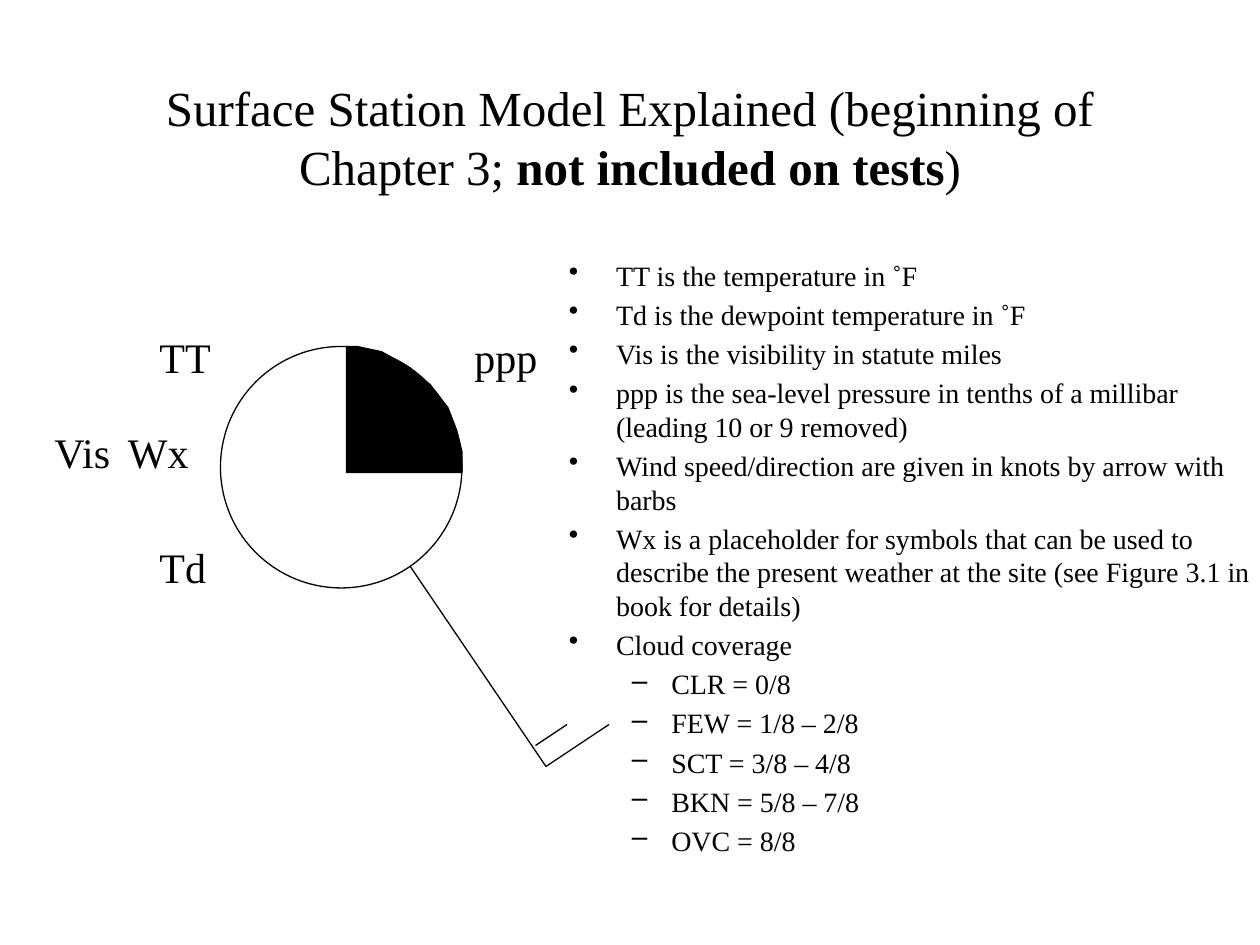
from lxml import etree
from pptx import Presentation
from pptx.dml.color import RGBColor
from pptx.enum.shapes import MSO_CONNECTOR, MSO_SHAPE
from pptx.enum.text import MSO_ANCHOR, PP_ALIGN
from pptx.oxml.ns import qn
from pptx.util import Pt

STRAIGHT = MSO_CONNECTOR.STRAIGHT
OVAL = MSO_SHAPE.OVAL
MIDDLE = MSO_ANCHOR.MIDDLE
CENTER = PP_ALIGN.CENTER
LEFT = PP_ALIGN.LEFT

FONT = "Times New Roman"
COLORS = {"ink": "000000", "paper": "FFFFFF"}
TITLE_ONLY = 5

TITLE_RUNS = [
    ("Surface Station Model Explained (beginning of Chapter 3; ", False),
    ("not included on tests", True),
    (")", False),
]
STATION_LABELS = [
    ("TT", 60, 0, 54),
    ("Td", 60, 120, 54),
    ("ppp", 240, 0, 54),
    ("Vis", 0, 54, 54),
    ("Wx", 42, 54, 84),
]
WIND_LINES = [
    (174, 84, 288, 252),
    (288, 252, 324, 228),
    (282, 240, 300, 228),
]
CLOUD_SECTOR = [
    (0, 0), (0, 72), (66, 72), (66, 60), (63, 48), (58, 35),
    (48, 22), (36, 12), (20, 3), (6, 0),
]
EXPLANATIONS = [
    (0, "TT is the temperature in ˚F"),
    (0, "Td is the dewpoint temperature in ˚F"),
    (0, "Vis is the visibility in statute miles"),
    (0, "ppp is the sea-level pressure in tenths of a millibar (leading 10 or 9 removed)"),
    (0, "Wind speed/direction are given in knots by arrow with barbs"),
    (0, "Wx is a placeholder for symbols that can be used to describe the present "
        "weather at the site (see Figure 3.1 in book for details)"),
    (0, "Cloud coverage"),
    (1, "CLR = 0/8"),
    (1, "FEW = 1/8 – 2/8"),
    (1, "SCT = 3/8 – 4/8"),
    (1, "BKN = 5/8 – 7/8"),
    (1, "OVC = 8/8"),
]
BULLETS = [("•", 27, -27), ("–", 58.5, -22.5)]


def rgb(name):
    return RGBColor.from_string(COLORS[name])


def style(paragraph, size, align=LEFT):
    paragraph.alignment = align
    paragraph.font.name = FONT
    paragraph.font.size = Pt(size)
    paragraph.font.color.rgb = rgb("ink")


def outline(part):
    part.line.color.rgb = rgb("ink")
    part.line.width = Pt(0.75)


def paint(part, fill):
    part.fill.solid()
    part.fill.fore_color.rgb = rgb(fill)
    outline(part)
    part.shadow.inherit = False


def set_bullet(paragraph, level):
    mark, margin, indent = BULLETS[level]
    properties = paragraph._p.get_or_add_pPr()
    properties.set("marL", str(Pt(margin)))
    properties.set("indent", str(Pt(indent)))
    etree.SubElement(properties, qn("a:buChar")).set("char", mark)


def add_title(slide, left, top, width, height):
    title = slide.shapes.title
    title.left, title.top = Pt(left), Pt(top)
    title.width, title.height = Pt(width), Pt(height)
    title.text_frame.word_wrap = True
    title.text_frame.vertical_anchor = MIDDLE
    heading = title.text_frame.paragraphs[0]
    style(heading, 28, CENTER)
    for words, bold in TITLE_RUNS:
        run = heading.add_run()
        run.text = words
        run.font.bold = bold


def add_station_model(slide, left, top):
    station = slide.shapes.add_group_shape().shapes

    for x1, y1, x2, y2 in WIND_LINES:
        wind = station.add_connector(
            STRAIGHT, Pt(left + x1), Pt(top + y1), Pt(left + x2), Pt(top + y2))
        outline(wind)
        etree.SubElement(wind._element.spPr, qn("a:effectLst"))

    circle = station.add_shape(OVAL, Pt(left + 102), Pt(top + 12), Pt(138), Pt(138))
    paint(circle, "paper")

    for words, x, y, width in STATION_LABELS:
        label = station.add_textbox(Pt(left + x), Pt(top + y), Pt(width), Pt(36))
        label.text_frame.word_wrap = True
        reading = label.text_frame.paragraphs[0]
        reading.text = words
        style(reading, 24)

    points = [(Pt(left + 174 + x), Pt(top + 12 + y)) for x, y in CLOUD_SECTOR]
    sector = station.build_freeform(*points[0])
    sector.add_line_segments(points[1:], close=True)
    paint(sector.convert_to_shape(), "ink")


def add_explanations(slide, left, top, width, height):
    box = slide.shapes.add_textbox(Pt(left), Pt(top), Pt(width), Pt(height))
    frame = box.text_frame
    frame.word_wrap = True
    for index, (level, words) in enumerate(EXPLANATIONS):
        item = frame.add_paragraph() if index else frame.paragraphs[0]
        item.text = words
        item.level = level
        set_bullet(item, level)
        style(item, 16)
        item.space_before = Pt(3.2)


def main():
    deck = Presentation()
    deck.slide_width, deck.slide_height = Pt(720), Pt(540)
    slide = deck.slides.add_slide(deck.slide_layouts[TITLE_ONLY])
    add_title(slide, 54, 33, 612, 90)
    add_station_model(slide, 24, 186)
    add_explanations(slide, 318, 144, 414, 324)
    deck.save("out.pptx")


if __name__ == "__main__":
    main()
